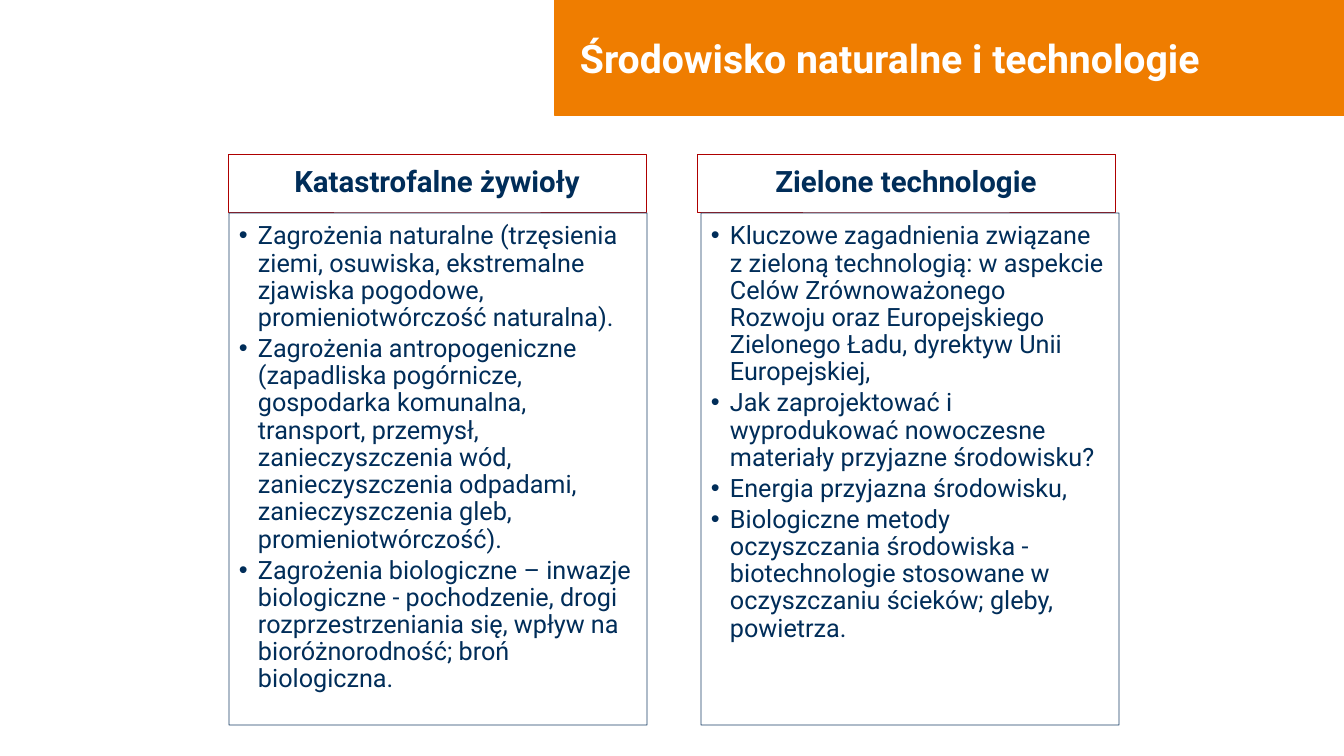
"""Build a slide that compares natural hazards with green technologies."""
from dataclasses import dataclass

from lxml import etree
from pptx import Presentation
from pptx.dml.color import RGBColor
from pptx.enum.text import MSO_ANCHOR, MSO_AUTO_SIZE, PP_ALIGN
from pptx.oxml.ns import qn
from pptx.util import Emu, Pt

TOP, MID = MSO_ANCHOR.TOP, MSO_ANCHOR.MIDDLE
LEFT, CENTER, JUST = PP_ALIGN.LEFT, PP_ALIGN.CENTER, PP_ALIGN.JUSTIFY
FIXED = MSO_AUTO_SIZE.NONE

TITLE = "Środowisko naturalne i technologie"
COLUMNS = [
    {
        "head": "Katastrofalne żywioły",
        "left": (228, 229),
        "items": [
            "Zagrożenia naturalne (trzęsienia ziemi, osuwiska, ekstremalne "
            "zjawiska pogodowe, promieniotwórczość naturalna).",
            "Zagrożenia antropogeniczne (zapadliska pogórnicze, gospodarka "
            "komunalna, transport, przemysł, zanieczyszczenia wód, "
            "zanieczyszczenia odpadami, zanieczyszczenia gleb, "
            "promieniotwórczość).",
            "Zagrożenia biologiczne – inwazje biologiczne - pochodzenie, "
            "drogi rozprzestrzeniania się, wpływ na bioróżnorodność; "
            "broń biologiczna.",
        ],
    },
    {
        "head": "Zielone technologie",
        "left": (697, 701),
        "items": [
            "Kluczowe zagadnienia związane\vz zieloną technologią: w aspekcie "
            "Celów Zrównoważonego Rozwoju oraz Europejskiego Zielonego Ładu, "
            "dyrektyw Unii Europejskiej,",
            "Jak zaprojektować i wyprodukować nowoczesne materiały przyjazne "
            "środowisku?",
            "Energia przyjazna środowisku,",
            "Biologiczne metody oczyszczania środowiska - biotechnologie "
            "stosowane w oczyszczaniu ścieków; gleby, powietrza.",
        ],
    },
]


@dataclass(frozen=True)
class Theme:
    """Colours, font and type sizes of the slide."""
    white: str = "FFFFFF"
    orange: str = "EF7D00"
    navy: str = "002D59"
    red: str = "AE0000"
    font: str = "Roboto"
    title: int = 28
    head: int = 21
    body: int = 18


THEME = Theme()
WIDE, HIGH = 1344, 756
BAR = (555, 0, 789, 116)
HEAD_TOP, HEAD_HIGH = 154, 58
LIST_TOP, LIST_HIGH = 213, 512
COL_WIDE = 418

STYLES = {
    "title": {
        "fill": THEME.orange, "line": THEME.orange, "width": 0.75,
        "alpha": 100, "pad": (10, 5, 10, 5), "anchor": MID,
        "indent": (15, 0), "bullet": False,
        "para": {"alignment": JUST, "line_spacing": 1.0,
                 "space_after": Pt(0)},
        "font": {"size": Pt(THEME.title), "bold": True},
        "color": THEME.white,
    },
    "head": {
        "fill": THEME.white, "line": THEME.red, "width": 0.5,
        "alpha": 100, "pad": (16, 9, 16, 9), "anchor": MID,
        "indent": (0, 0), "bullet": False,
        "para": {"alignment": CENTER, "line_spacing": 0.9,
                 "space_after": Pt(0)},
        "font": {"size": Pt(THEME.head), "bold": True},
        "color": THEME.navy,
    },
    "list": {
        "fill": THEME.white, "line": THEME.navy, "width": 0.5,
        "alpha": 90, "pad": (10, 10, 14, 16), "anchor": TOP,
        "indent": (19, -19), "bullet": True,
        "para": {"alignment": LEFT, "line_spacing": 0.9,
                 "space_after": Pt(2.7)},
        "font": {"size": Pt(THEME.body), "bold": False},
        "color": THEME.navy,
    },
}


def px(count):
    """Turn px into EMU."""
    return Emu(round(count * 914400 / 100.8))


def assign(target, values):
    """Set each named attribute on the target."""
    for name, value in values.items():
        setattr(target, name, value)


def paint(shape, style):
    """Give the box its fill and outline."""
    shape.fill.solid()
    shape.fill.fore_color.rgb = RGBColor.from_string(style["fill"])
    shape.line.color.rgb = RGBColor.from_string(style["line"])
    shape.line.width = Pt(style["width"])
    if style["alpha"] < 100:
        for color in shape.element.spPr.iter(qn("a:srgbClr")):
            alpha = etree.SubElement(color, qn("a:alpha"))
            alpha.set("val", str(style["alpha"] * 1000))


def write(frame, lines, style):
    """Fill the text frame with one paragraph a line."""
    sides = ("margin_left", "margin_top", "margin_right", "margin_bottom")
    assign(frame, dict(zip(sides, map(px, style["pad"]))))
    assign(frame, {"word_wrap": True, "auto_size": FIXED,
                   "vertical_anchor": style["anchor"]})
    for place, line in enumerate(lines):
        para = frame.add_paragraph() if place else frame.paragraphs[0]
        para.text = line
        props = para._p.get_or_add_pPr()
        for name, size in zip(("marL", "indent"), style["indent"]):
            props.set(name, str(px(size)))
        if style["bullet"]:
            etree.SubElement(props, qn("a:buFont")).set("typeface", "Arial")
            etree.SubElement(props, qn("a:buChar")).set("char", "•")
        assign(para, {"space_before": Pt(0), **style["para"]})
        for run in para.runs:
            assign(run.font, {"name": THEME.font, **style["font"]})
            run.font.color.rgb = RGBColor.from_string(style["color"])


def place_box(shape, box, lines, kind):
    """Move, paint and fill one placeholder."""
    assign(shape, dict(zip(("left", "top", "width", "height"), map(px, box))))
    paint(shape, STYLES[kind])
    write(shape.text_frame, lines, STYLES[kind])


def main():
    """Make the slide and save it."""
    deck = Presentation()
    assign(deck, {"slide_width": px(WIDE), "slide_height": px(HIGH)})
    layout = deck.slide_layouts.get_by_name("Comparison")
    slide = deck.slides.add_slide(layout)
    title, *slots = slide.placeholders
    place_box(title, BAR, [TITLE], "title")
    for column, head, body in zip(COLUMNS, slots[::2], slots[1::2]):
        head_left, list_left = column["left"]
        place_box(head, (head_left, HEAD_TOP, COL_WIDE, HEAD_HIGH),
                  [column["head"]], "head")
        place_box(body, (list_left, LIST_TOP, COL_WIDE, LIST_HIGH),
                  column["items"], "list")
    deck.save("out.pptx")


if __name__ == "__main__":
    main()
